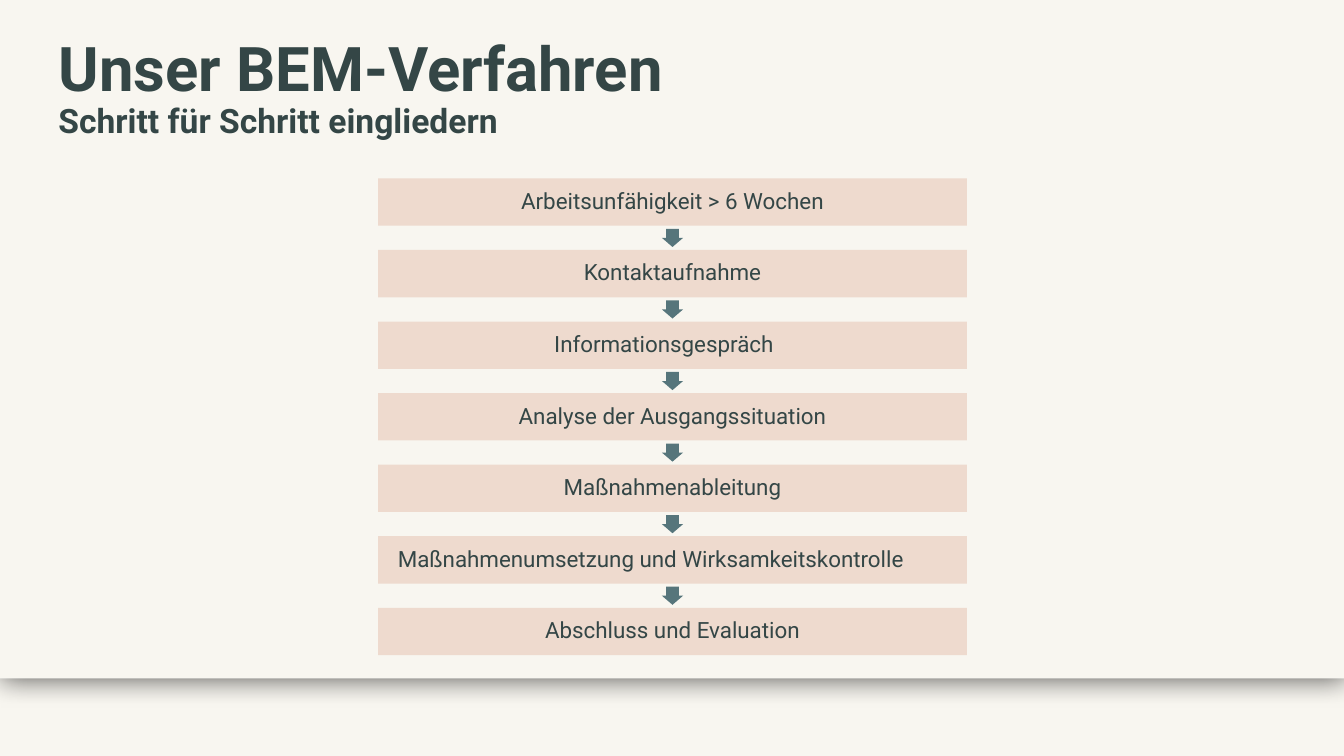
from lxml.etree import SubElement
from pptx import Presentation
from pptx.dml.color import RGBColor
from pptx.enum.shapes import MSO_SHAPE as Preset
from pptx.enum.text import MSO_ANCHOR as Anchor, MSO_AUTO_SIZE as AutoSize, PP_ALIGN as Align
from pptx.oxml.ns import qn
from pptx.util import Inches, Pt

WIDTH, HEIGHT = 13.33, 7.5
PANEL_HEIGHT = 6.73
PAPER, INK, BAR, ARROW = "F8F6F0", "344646", "EEDACE", "56757B"
STEP_PITCH, BAR_HEIGHT = 0.71, 0.47
ARROW_WIDTH, ARROW_HEIGHT = 0.21, 0.18
INSET = 0.07
STEPS = [
    ("Arbeitsunfähigkeit > 6 Wochen", 0),
    ("Kontaktaufnahme", 0),
    ("Informationsgespräch", 0.17),
    ("Analyse der Ausgangssituation", 0),
    ("Maßnahmenableitung", 0),
    ("Maßnahmenumsetzung und Wirksamkeitskontrolle", 0.43),
    ("Abschluss und Evaluation", 0),
]


def color(value):
    return RGBColor.from_string(value)


def apply(target, values):
    for name, value in values.items():
        setattr(target, name, value)


def set_font(span, size, bold=False):
    apply(span.font, {"name": "Roboto", "size": Pt(size), "bold": bold})
    span.font.color.rgb = color(INK)


def set_frame(frame, left=0, top=0, right=0, bottom=0):
    apply(frame, {
        "margin_left": Inches(left), "margin_top": Inches(top),
        "margin_right": Inches(right), "margin_bottom": Inches(bottom),
        "vertical_anchor": Anchor.MIDDLE, "word_wrap": True,
        "auto_size": AutoSize.NONE,
    })


def add_block(page, preset, box, fill):
    block = page.shapes.add_shape(preset, *map(Inches, box))
    block.shadow.inherit = False
    block.fill.solid()
    block.fill.fore_color.rgb = color(fill)
    block.line.fill.background()
    return block


def add_shadow(block):
    effects = block.element.spPr.find(qn("a:effectLst"))
    shadow = SubElement(effects, qn("a:outerShdw"), {
        "blurRad": str(Pt(19.5)), "dist": str(Pt(2)), "dir": str(45 * 60000),
        "algn": "ctr", "rotWithShape": "0",
    })
    tone = SubElement(shadow, qn("a:srgbClr"), val="000000")
    SubElement(tone, qn("a:alpha"), val="60000")


def add_background(page, box):
    left, top, width, height = box
    add_block(page, Preset.RECTANGLE,
              (left, top + PANEL_HEIGHT, width, height - PANEL_HEIGHT), PAPER)
    add_shadow(add_block(page, Preset.RECTANGLE, (left, top, width, PANEL_HEIGHT), PAPER))


def add_heading(page, box, heading, subheading):
    title = page.shapes.title
    apply(title, dict(zip(("left", "top", "width", "height"), map(Inches, box))))
    page.shapes.element.append(title.element)
    set_frame(title.text_frame)
    para = title.text_frame.paragraphs[0]
    apply(para, {"alignment": Align.LEFT, "line_spacing": 0.9})
    for text, size in ((heading, 44), (subheading, 24)):
        if para.runs:
            para.add_line_break()
        span = para.add_run()
        span.text = text
        set_font(span, size, bold=True)


def add_step(page, box, text, right_indent):
    bar = add_block(page, Preset.RECTANGLE, box, BAR)
    set_frame(bar.text_frame, INSET, INSET, INSET + right_indent, INSET)
    para = bar.text_frame.paragraphs[0]
    apply(para, {"alignment": Align.CENTER, "line_spacing": 0.9})
    span = para.add_run()
    span.text = text
    set_font(span, 16)


def add_process(page, box):
    left, top, width, _ = box
    gap = STEP_PITCH - BAR_HEIGHT
    for row, (text, right_indent) in enumerate(STEPS):
        bar_top = top + row * STEP_PITCH
        if row:
            arrow_box = (left + (width - ARROW_WIDTH) / 2,
                         bar_top - (gap + ARROW_HEIGHT) / 2, ARROW_WIDTH, ARROW_HEIGHT)
            arrow = add_block(page, Preset.DOWN_ARROW, arrow_box, ARROW)
            arrow.adjustments[0] = 0.6
            arrow.adjustments[1] = 0.5
        add_step(page, (left, bar_top, width, BAR_HEIGHT), text, right_indent)


def main():
    deck = Presentation()
    apply(deck, {"slide_width": Inches(WIDTH), "slide_height": Inches(HEIGHT)})
    page = deck.slides.add_slide(deck.slide_layouts[5])
    add_background(page, (0, 0, WIDTH, HEIGHT))
    add_heading(page, (0.58, 0.31, 11, 1.16),
                "Unser BEM-Verfahren", "Schritt für Schritt eingliedern")
    add_process(page, (3.75, 1.77, 5.84, 4.73))
    deck.save("out.pptx")


if __name__ == "__main__":
    main()
